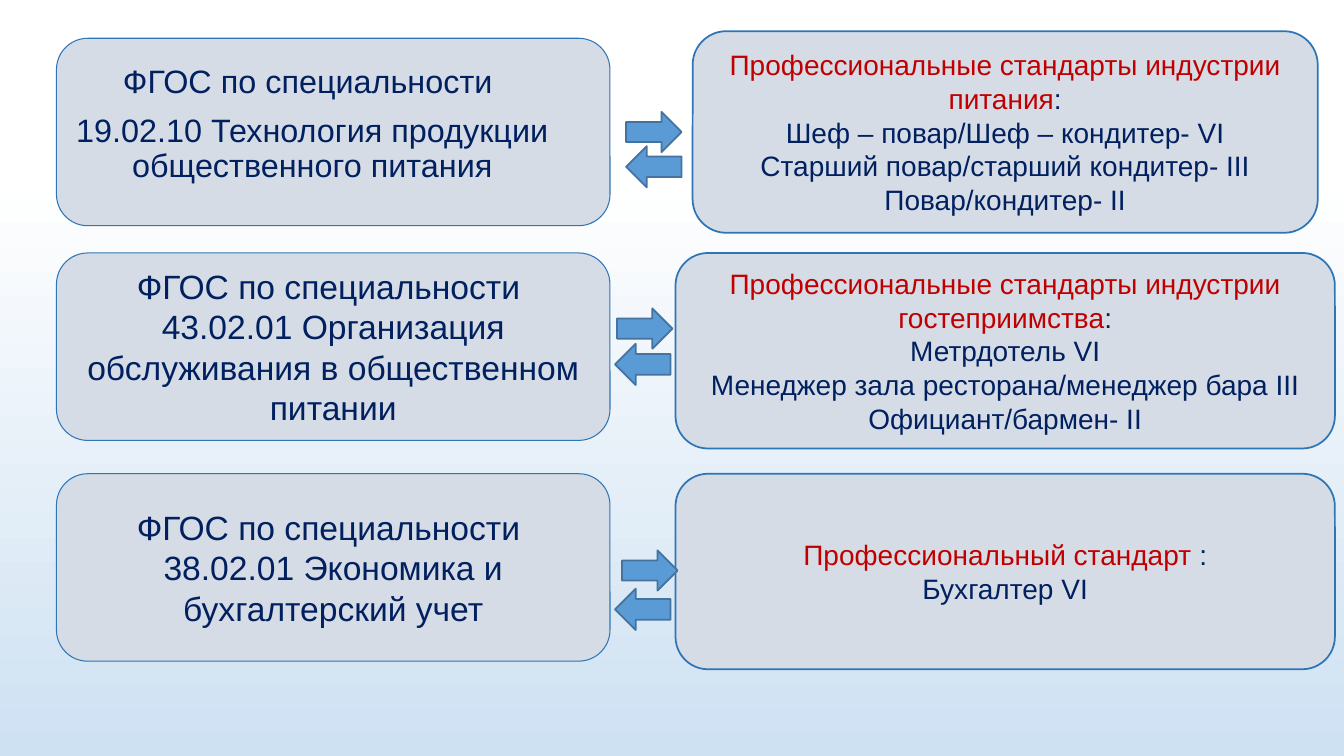
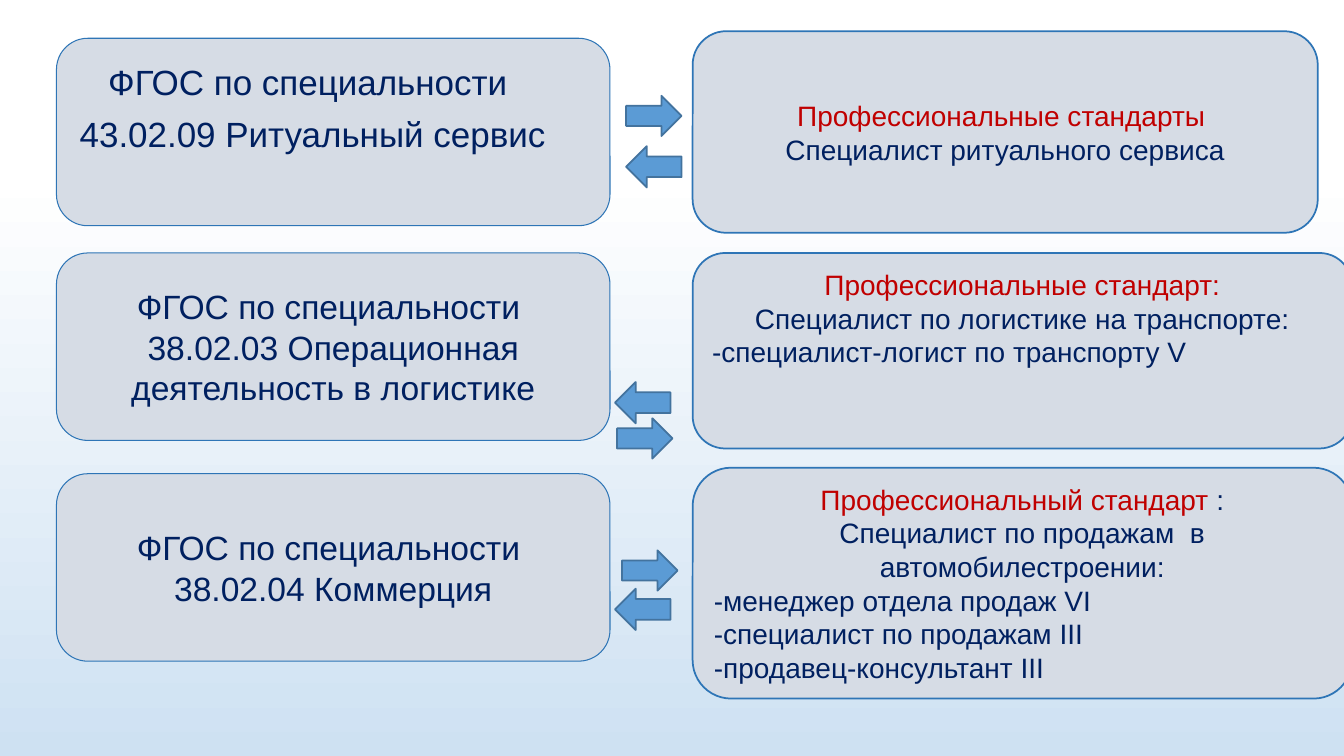
"""Build two slides that pair training programmes with job standards."""
from pptx import Presentation
from pptx.dml.color import RGBColor
from pptx.enum.shapes import MSO_SHAPE as Shape
from pptx.enum.text import MSO_ANCHOR as Anchor, PP_ALIGN as Align
from pptx.util import Inches, Pt

WHITE = RGBColor(0xFF, 0xFF, 0xFF)
SKY = RGBColor(0xCE, 0xE1, 0xF2)
GREY = RGBColor(0xD6, 0xDC, 0xE5)
EDGE = RGBColor(0x2E, 0x75, 0xB6)
BLUE = RGBColor(0x5B, 0x9B, 0xD5)
STEEL = RGBColor(0x43, 0x73, 0x9E)
NAVY = RGBColor(0x00, 0x20, 0x60)
RED = RGBColor(0xC0, 0x00, 0x00)

FONT = "Arial"
LEAD = "ФГОС по специальности "
TOPS = (0.38, 2.51, 4.7)

FOOD = {
    "size": 23.1,
    "left": ("19.02.10 Технология продукции общественного питания",
             "43.02.01 Организация обслуживания в общественном питании",
             "38.02.01 Экономика и бухгалтерский учет"),
    "right": (
        ((6.87, 0.31, 6.2, 2),
         "Профессиональные стандарты индустрии питания", ":",
         ("Шеф – повар/Шеф – кондитер- VI",
          "Старший повар/старший кондитер- III",
          "Повар/кондитер- II"), Anchor.MIDDLE),
        ((6.7, 2.51, 6.54, 1.94),
         "Профессиональные стандарты индустрии гостеприимства", ":",
         ("Метрдотель VI",
          "Менеджер зала ресторана/менеджер бара III",
          "Официант/бармен- II"), Anchor.MIDDLE),
        ((6.7, 4.7, 6.54, 1.94),
         "Профессиональный стандарт ", ":",
         ("Бухгалтер VI",), Anchor.MIDDLE),
    ),
    "arrows": ((6.21, 1.11, 6.21, 1.45),
               (6.12, 3.06, 6.1, 3.41),
               (6.17, 5.46, 6.1, 5.84)),
}

TRADE = {
    "size": 25,
    "left": ("43.02.09 Ритуальный сервис",
             "38.02.03 Операционная деятельность в логистике",
             "38.02.04 Коммерция"),
    "right": (
        ((6.87, 0.31, 6.2, 2),
         "Профессиональные стандарты ", "",
         ("Специалист ритуального сервиса",), Anchor.MIDDLE),
        ((6.87, 2.51, 6.54, 1.94),
         "Профессиональные стандарт:", "",
         ("Специалист по логистике на транспорте:",
          "-специалист-логист по транспорту V"), Anchor.TOP),
        ((6.87, 4.64, 6.54, 2.29),
         "Профессиональный стандарт ", ":",
         ("Специалист по продажам  в автомобилестроении:",
          "-менеджер отдела продаж VI",
          "-специалист по продажам III",
          "-продавец-консультант III"), Anchor.MIDDLE),
    ),
    "arrows": ((6.21, 0.95, 6.21, 1.45),
               (6.12, 4.15, 6.1, 3.79),
               (6.17, 5.46, 6.1, 5.84)),
}


def paint_back(master):
    fill = master.background.fill
    fill.gradient()
    fill.gradient_angle = 270
    for stop, place, color in zip(fill.gradient_stops, (0.23, 1), (WHITE, SKY)):
        stop.position = place
        stop.color.rgb = color


def add_form(slide, kind, area, fill, edge, width):
    form = slide.shapes.add_shape(kind, *map(Inches, area))
    form.shadow.inherit = False
    form.fill.solid()
    form.fill.fore_color.rgb = fill
    form.line.color.rgb = edge
    form.line.width = Pt(width)
    return form


def set_font(para, size, color=NAVY):
    para.font.name = FONT
    para.font.size = Pt(size)
    para.font.color.rgb = color


def write(frame, lines, size):
    frame.word_wrap = True
    frame.text = "\n".join(lines)
    for para, line in zip(frame.paragraphs, lines):
        para.alignment = Align.LEFT if line.startswith("-") else Align.CENTER
        set_font(para, size)


def add_course(slide, top, name):
    area = (0.56, top, 5.49, 1.86)
    card = add_form(slide, Shape.ROUNDED_RECTANGLE, area, GREY, EDGE, 0.75)
    if name:
        card.text_frame.vertical_anchor = Anchor.MIDDLE
        write(card.text_frame, (LEAD, name), 24)


def add_label(slide, name, size):
    area = map(Inches, (0.58, 0.6, 5.04, 1.42))
    frame = slide.shapes.add_textbox(*area).text_frame
    write(frame, (LEAD, name), size)
    for para in frame.paragraphs:
        para.line_spacing = 0.9
    frame.paragraphs[1].space_before = Pt(10)


def add_norm(slide, area, head, tail, jobs, anchor):
    card = add_form(slide, Shape.ROUNDED_RECTANGLE, area, GREY, EDGE, 1.25)
    frame = card.text_frame
    frame.vertical_anchor = anchor
    write(frame, (head, *jobs), 20)
    para = frame.paragraphs[0]
    set_font(para, 20, RED)
    if tail:
        run = para.add_run()
        run.text = tail
        run.font.color.rgb = NAVY


def add_pair(slide, x_to, y_to, x_back, y_back):
    for kind, area in ((Shape.RIGHT_ARROW, (x_to, y_to, 0.55, 0.4)),
                       (Shape.LEFT_ARROW, (x_back, y_back, 0.55, 0.41))):
        add_form(slide, kind, area, BLUE, STEEL, 1.25)


def add_page(deck, data):
    slide = deck.slides.add_slide(deck.slide_layouts[6])
    first, *rest = data["left"]
    for top, name in zip(TOPS, ("", *rest)):
        add_course(slide, top, name)
    add_label(slide, first, data["size"])
    for norm in data["right"]:
        add_norm(slide, *norm)
    for pair in data["arrows"]:
        add_pair(slide, *pair)


def main():
    deck = Presentation()
    deck.slide_width = Inches(13.33)
    deck.slide_height = Inches(7.5)
    paint_back(deck.slide_master)
    for data in (FOOD, TRADE):
        add_page(deck, data)
    deck.save("out.pptx")


if __name__ == "__main__":
    main()
